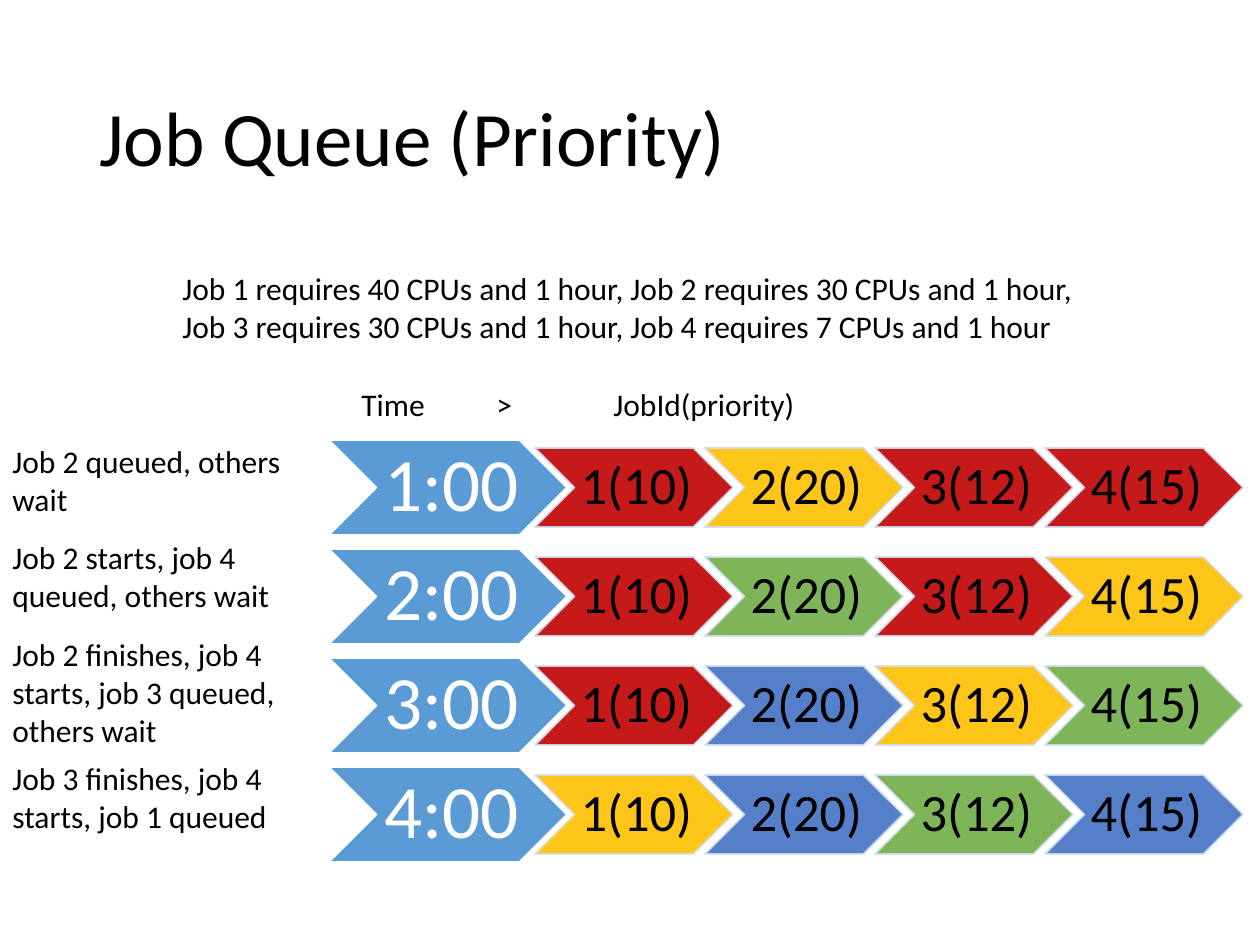
from lxml.etree import SubElement
from pptx import Presentation
from pptx.dml.color import RGBColor
from pptx.enum.shapes import MSO_SHAPE
from pptx.enum.text import MSO_ANCHOR, PP_ALIGN
from pptx.oxml.ns import qn
from pptx.util import Pt

BLACK = RGBColor(0x00, 0x00, 0x00)
WHITE = RGBColor(0xFF, 0xFF, 0xFF)
TIME_BLUE = RGBColor(0x5B, 0x9B, 0xD5)
PALE_BLUE = RGBColor(0xD2, 0xDE, 0xEF)
WAITING = RGBColor(0xC0, 0x00, 0x00)
QUEUED = RGBColor(0xFF, 0xC0, 0x00)
RUNNING = RGBColor(0x70, 0xAD, 0x47)
FINISHED = RGBColor(0x44, 0x72, 0xC4)

TITLE = "Job Queue (Priority)"
REQUIREMENTS = [
    "Job 1 requires 40 CPUs and 1 hour, Job 2 requires 30 CPUs and 1 hour,",
    "Job 3 requires 30 CPUs and 1 hour, Job 4 requires 7 CPUs and 1 hour",
]
HEADINGS = "Time\t>\tJobId(priority)"
HEADING_TABS = [135, 252]
JOBS = ["1(10)", "2(20)", "3(12)", "4(15)"]
SCHEDULE = [
    ("1:00", [WAITING, QUEUED, WAITING, WAITING]),
    ("2:00", [WAITING, RUNNING, WAITING, QUEUED]),
    ("3:00", [WAITING, FINISHED, QUEUED, RUNNING]),
    ("4:00", [QUEUED, FINISHED, RUNNING, FINISHED]),
]
# Text, top and height
NOTES = [
    ("Job 2 queued, others wait", 436, 89),
    ("Job 2 starts, job 4 queued, others wait", 532, 89),
    ("Job 2 finishes, job 4 starts, job 3 queued, others wait", 629, 127),
    ("Job 3 finishes, job 4 starts, job 1 queued", 753, 89),
]

PX = 914400 / 126
NOTE_WIDTH = 329
TIME_LEFT, TIME_WIDTH, TIME_HEIGHT = 329, 238, 95
JOB_LEFT, JOB_WIDTH, JOB_HEIGHT, JOB_STEP = 535, 198, 79, 170
ROW_TOP, ROW_STEP = 440, 109


def px(length):
    return round(length * PX)


def add_span(para, text, size, color):
    span = para.add_run()
    span.text = text
    span.font.name = "Calibri"
    span.font.size = Pt(size)
    span.font.color.rgb = color


def add_text(page, lines, left, top, width, height, size=18, wrap=True):
    box = page.shapes.add_textbox(px(left), px(top), px(width), px(height))
    frame = box.text_frame
    frame.word_wrap = wrap
    for index, line in enumerate(lines):
        para = frame.add_paragraph() if index else frame.paragraphs[0]
        add_span(para, line, size, BLACK)
    return frame


def set_tabs(para, stops):
    tabs = SubElement(para._p.get_or_add_pPr(), qn("a:tabLst"))
    for stop in stops:
        SubElement(tabs, qn("a:tab"), pos=str(px(stop)), algn="l")


def set_opacity(shape, percent):
    """Apply one opacity to both the fill and the outline."""
    for color in list(shape._element.spPr.iter(qn("a:srgbClr"))):
        SubElement(color, qn("a:alpha"), val=str(percent * 1000))


def add_chevron(page, text, left, top, width, height, fill, line, size, color, inset):
    shape = page.shapes.add_shape(
        MSO_SHAPE.CHEVRON, px(left), px(top), px(width), px(height))
    shape.shadow.inherit = False
    shape.fill.solid()
    shape.fill.fore_color.rgb = fill
    shape.line.color.rgb = line
    shape.line.width = Pt(1)
    frame = shape.text_frame
    frame.word_wrap = False
    frame.vertical_anchor = MSO_ANCHOR.MIDDLE
    frame.margin_left, frame.margin_right = px(inset), 0
    frame.margin_top = frame.margin_bottom = px(inset / 2)
    para = frame.paragraphs[0]
    para.alignment = PP_ALIGN.CENTER
    para.line_spacing = 0.9
    add_span(para, text, size, color)
    return shape


def main():
    deck = Presentation()
    deck.slide_width, deck.slide_height = px(1260), px(945)
    page = deck.slides.add_slide(deck.slide_layouts[6])

    title = add_text(page, [TITLE], 87, 50, 934, 183, size=44)
    title.vertical_anchor = MSO_ANCHOR.MIDDLE
    title.paragraphs[0].line_spacing = 0.9

    for note, top, height in NOTES:
        add_text(page, [note], 0, top, NOTE_WIDTH, height)

    for row, (time, states) in enumerate(SCHEDULE):
        top = ROW_TOP + row * ROW_STEP
        add_chevron(page, time, TIME_LEFT, top, TIME_WIDTH, TIME_HEIGHT,
                    TIME_BLUE, WHITE, 43, WHITE, inset=8)
        job_top = top + (TIME_HEIGHT - JOB_HEIGHT) // 2
        for column, (job, state) in enumerate(zip(JOBS, states)):
            chevron = add_chevron(
                page, job, JOB_LEFT + column * JOB_STEP, job_top, JOB_WIDTH,
                JOB_HEIGHT, state, PALE_BLUE, 30, BLACK, inset=5)
            set_opacity(chevron, 90)

    headings = add_text(page, [HEADINGS], 349, 379, 462, 50, wrap=False)
    set_tabs(headings.paragraphs[0], HEADING_TABS)
    add_text(page, REQUIREMENTS, 170, 263, 934, 89, wrap=False)

    deck.save("out.pptx")


if __name__ == "__main__":
    main()
